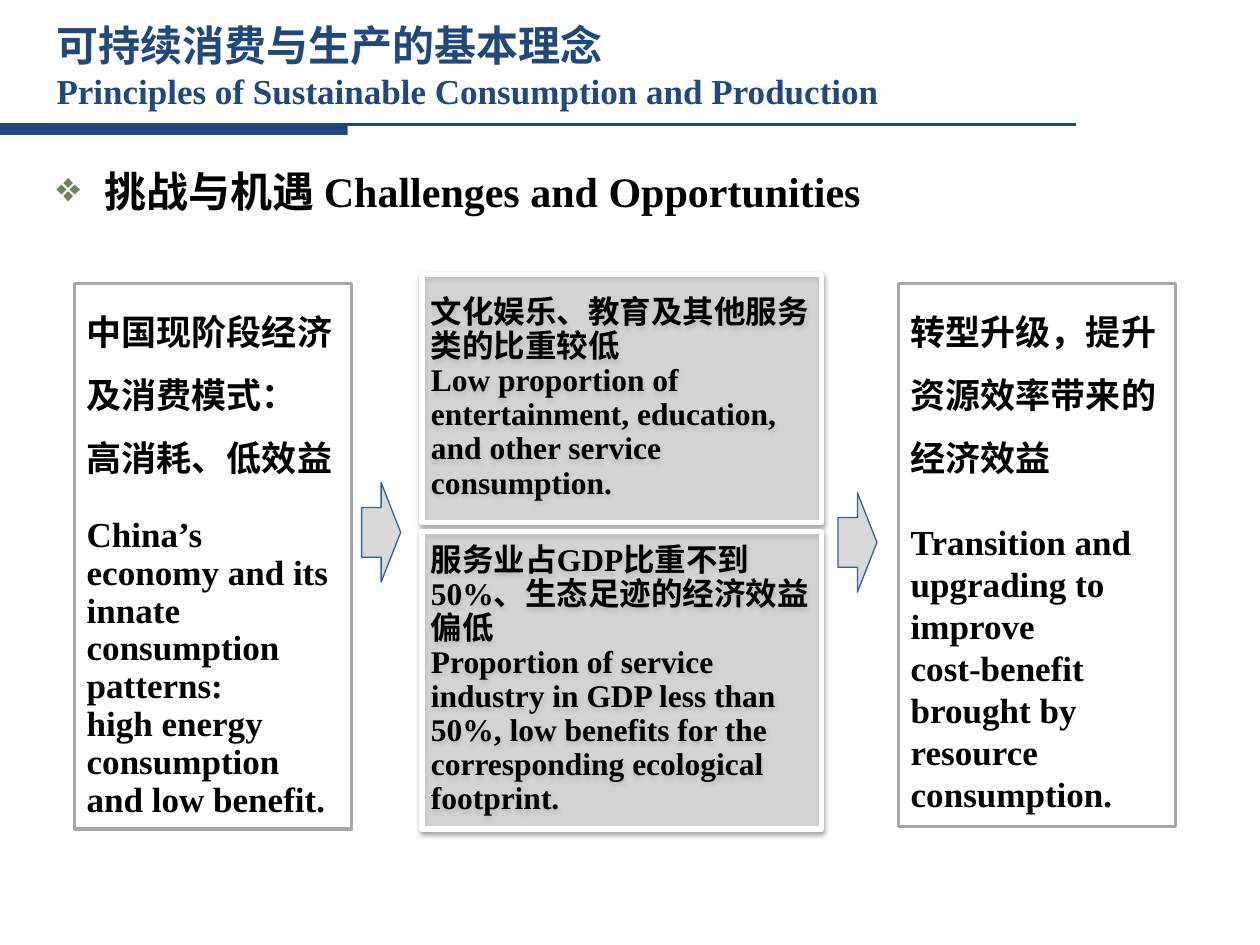
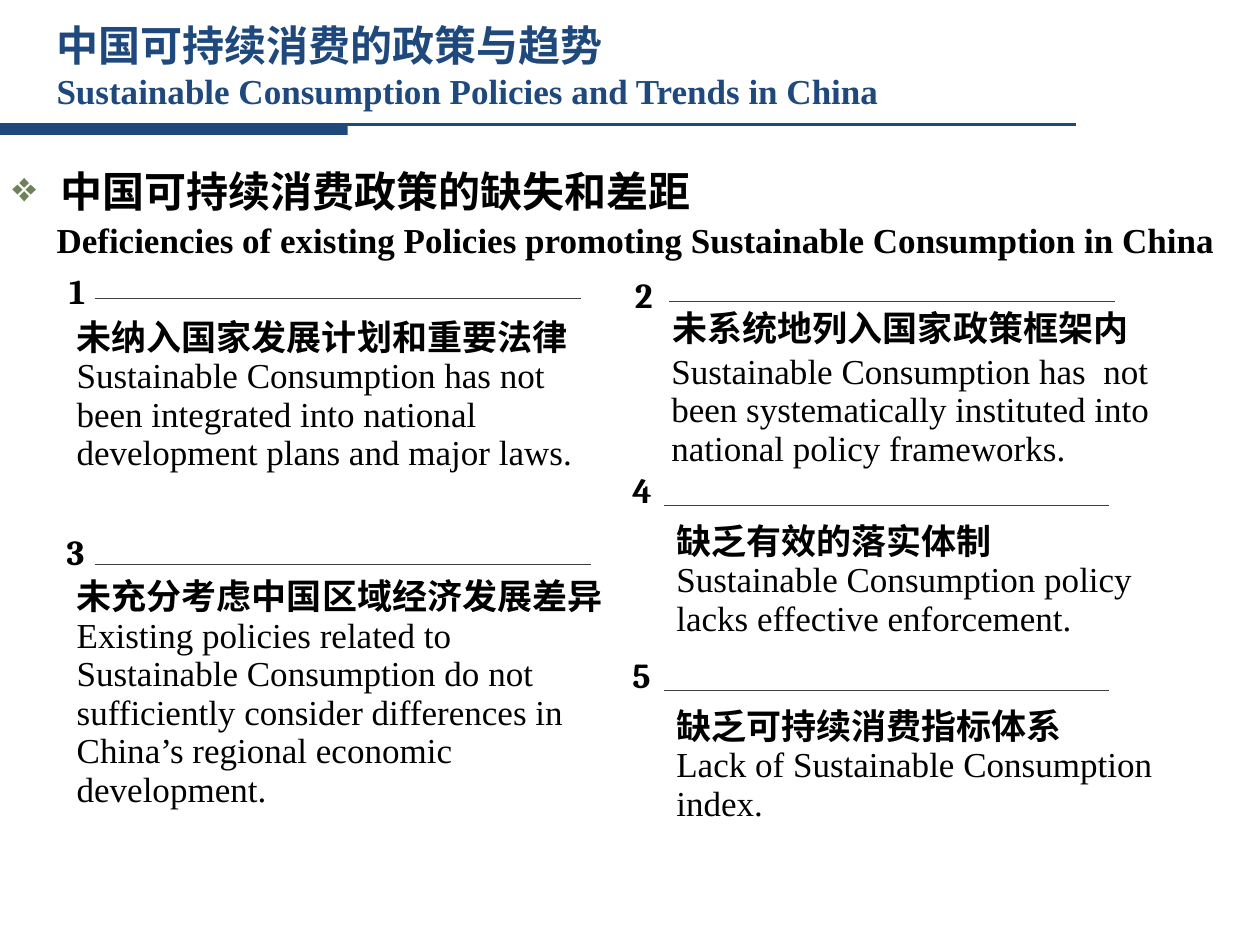
from pptx import Presentation
from pptx.dml.color import RGBColor
from pptx.enum.shapes import MSO_CONNECTOR, MSO_SHAPE
from pptx.enum.text import MSO_ANCHOR, PP_ALIGN
from pptx.oxml.ns import qn
from pptx.util import Inches, Pt
from lxml import etree

NAVY = RGBColor(0x1F, 0x49, 0x7D)
BLUE = RGBColor(0x37, 0x60, 0x92)
BLACK = RGBColor(0, 0, 0)
WHITE = RGBColor(0xFF, 0xFF, 0xFF)
PALE = RGBColor(0xD9, 0xD9, 0xD9)
GRAY = RGBColor(0xA6, 0xA6, 0xA6)
DARK = RGBColor(0x3F, 0x3F, 0x3F)
OLIVE = RGBColor(0x6E, 0x81, 0x5B)

HAN = "Noto Sans CJK SC"
SERIF = "Times New Roman"
DIGIT = "Cambria"

RECT = MSO_SHAPE.RECTANGLE
ARROW = MSO_SHAPE.RIGHT_ARROW
LINE = MSO_CONNECTOR.STRAIGHT
TOP = MSO_ANCHOR.TOP
MIDDLE = MSO_ANCHOR.MIDDLE
LEFT = PP_ALIGN.LEFT


def add(parent, tag, **attrs):
    return etree.SubElement(parent, qn(tag), attrs)


class Deck:
    def __init__(self):
        self.prs = Presentation()
        self.prs.slide_width = Inches(10)
        self.prs.slide_height = Inches(7.5)
        self.slide = None

    def page(self, han, title):
        self.slide = self.prs.slides.add_slide(self.prs.slide_layouts[6])
        self.rule(0, 8.54, 0.99, NAVY, 1.5)
        self.shape(RECT, (0, 0.99, 2.76, 0.08), NAVY)
        frame = self.box((0.35, 0.21, 8.58, 0.62), MIDDLE)
        self.para(frame, han, HAN, 24, color=NAVY)
        self.para(frame, title, SERIF, color=NAVY)

    def rule(self, left, right, top, color=DARK, width=0.5):
        line = self.slide.shapes.add_connector(
            LINE, Inches(left), Inches(top), Inches(right), Inches(top))
        line.line.color.rgb = color
        line.line.width = Pt(width)
        add(line._element.spPr, "a:effectLst")

    def shape(self, kind, area, fill, edge=None, width=0.75):
        shape = self.slide.shapes.add_shape(kind, *map(Inches, area))
        shape.shadow.inherit = False
        shape.fill.solid()
        shape.fill.fore_color.rgb = fill
        if edge is None:
            shape.line.fill.background()
        else:
            shape.line.color.rgb = edge
            shape.line.width = Pt(width)
        return shape

    def frame(self, shape, anchor=TOP):
        frame = shape.text_frame
        frame.word_wrap = True
        frame.vertical_anchor = anchor
        return frame

    def box(self, area, anchor=TOP):
        return self.frame(
            self.slide.shapes.add_textbox(*map(Inches, area)), anchor)

    def card(self, area):
        return self.frame(self.shape(RECT, area, WHITE, GRAY, 2))

    def panel(self, area):
        shape = self.shape(RECT, area, PALE, WHITE, 3)
        props = shape._element.spPr
        fill = props.find(qn("a:solidFill"))
        add(fill[0], "a:alpha", val="50000")
        glow = add(props.find(qn("a:effectLst")), "a:outerShdw",
                   blurRad=str(Pt(3.1)), dist=str(Pt(1.6)),
                   dir="5400000", rotWithShape="0")
        add(add(glow, "a:srgbClr", val="000000"), "a:alpha", val="38000")
        frame = self.frame(shape, MIDDLE)
        frame.margin_left = frame.margin_right = Inches(0.07)
        frame.margin_top = frame.margin_bottom = Inches(0.07)
        return frame

    def para(self, frame, text, face, size=20, bold=True, color=BLACK,
             space=None, before=None, indent=None, bullet=False):
        para = frame.paragraphs[0]
        if para.runs:
            para = frame.add_paragraph()
        para.alignment = LEFT
        if space is not None:
            para.line_spacing = space
        if before is not None:
            para.space_before = Pt(before)
        props = para._p.get_or_add_pPr()
        if indent is not None:
            props.set("marL", str(Inches(indent)))
        if bullet:
            props.set("indent", str(-Inches(indent)))
            add(add(props, "a:buClr"), "a:srgbClr", val=str(OLIVE))
            add(props, "a:buChar", char="❖")
        para.add_run().text = text
        font = para.font
        font.name = face
        font.size = Pt(size)
        font.bold = bold
        font.color.rgb = color
        add(font._element, "a:ea", typeface=HAN)
        return para

    def head(self, left, width, text):
        frame = self.box((left, 1.31, width, 1.1))
        para = self.para(frame, text, HAN, 24, space=0.9,
                         indent=0.38, bullet=True)
        return frame, para

    def point(self, num, spot, rule, notes):
        self.rule(*rule)
        self.para(self.box((*spot, 0.9, 0.4)), num, DIGIT)
        for area, han, text in notes:
            frame = self.box(area)
            if han:
                self.para(frame, han, HAN, space=Pt(22))
            if text:
                self.para(frame, text, SERIF, bold=False, space=Pt(22))


def goals(deck):
    deck.page("可持续消费与生产的基本理念",
              "Principles of Sustainable Consumption and Production")
    para = deck.head(0.35, 9.37, "挑战与机遇 ")[1]
    run = para.add_run()
    run.text = "Challenges and Opportunities"
    run.font.name = SERIF

    panels = [
        (2.18, 1.97, HAN, "文化娱乐、教育及其他服务类的比重较低",
         "Low proportion of entertainment, education, and other service "
         "consumption."),
        (4.22, 2.36, SERIF,
         "服务业占GDP比重不到50%、生态足迹的经济效益偏低",
         "Proportion of service industry in GDP less than 50%, low benefits "
         "for the corresponding ecological footprint."),
    ]
    for top, height, face, han, text in panels:
        frame = deck.panel((3.35, top, 3.17, height))
        deck.para(frame, han, face, 18, space=0.9)
        deck.para(frame, text, SERIF, 18, space=0.9)

    cards = [
        (7.13, 4.31, ["转型升级，提升资源效率带来的经济效益"],
         ["Transition and upgrading to improve",
          "cost-benefit brought by resource consumption."], None, 24),
        (0.59, 4.33, ["中国现阶段经济及消费模式：", "高消耗、低效益"],
         ["China’s economy and its innate consumption patterns:",
          "high energy consumption and low benefit."], 0.9, 22),
    ]
    for left, height, hans, texts, space, gap in cards:
        frame = deck.card((left, 2.25, 2.2, height))
        for han in hans:
            deck.para(frame, han, HAN, space=1.5)
        for i, text in enumerate(texts):
            deck.para(frame, text, SERIF, space=space,
                      before=0 if i else gap)

    for left, top in [(2.87, 3.83), (6.65, 3.91)]:
        deck.shape(ARROW, (left, top, 0.31, 0.79), PALE, BLUE)


def gaps(deck):
    deck.page("中国可持续消费的政策与趋势",
              "Sustainable Consumption Policies and Trends in China")
    frame = deck.head(0, 9.88, "中国可持续消费政策的缺失和差距")[0]
    deck.para(frame, "Deficiencies of existing Policies promoting "
              "Sustainable Consumption in China", SERIF, space=0.9,
              before=4, indent=0.35)

    points = [
        ((0.45, 2.09), (0.75, 4.61, 2.37), [
            ((0.51, 2.48, 4.17, 0.88), "未纳入国家发展计划和重要法律",
             "Sustainable Consumption has not been integrated into national "
             "development plans and major laws.")]),
        ((4.94, 2.12), (5.31, 8.85, 2.39), [
            ((5.24, 2.41, 3.93, 0.4), "未系统地列入国家政策框架内", None),
            ((5.23, 2.75, 4.33, 1.13), None,
             "Sustainable Consumption has  not been systematically "
             "instituted into national policy frameworks.")]),
        ((0.43, 4.16), (0.75, 4.69, 4.48), [
            ((0.51, 4.54, 4.41, 0.86), "未充分考虑中国区域经济发展差异",
             "Existing policies related to Sustainable Consumption do not "
             "sufficiently consider differences in China’s regional "
             "economic development.")]),
        ((4.92, 3.67), (5.27, 8.8, 4.01), [
            ((5.27, 4.1, 3.83, 0.86), "缺乏有效的落实体制",
             "Sustainable Consumption policy lacks effective "
             "enforcement.")]),
        ((4.92, 5.14), (5.27, 8.8, 5.48), [
            ((5.27, 5.57, 4.73, 0.86), "缺乏可持续消费指标体系",
             "Lack of Sustainable Consumption index.")]),
    ]
    for num, (spot, rule, notes) in enumerate(points, 1):
        deck.point(str(num), spot, rule, notes)


def main():
    deck = Deck()
    goals(deck)
    gaps(deck)
    deck.prs.save("out.pptx")


if __name__ == "__main__":
    main()
